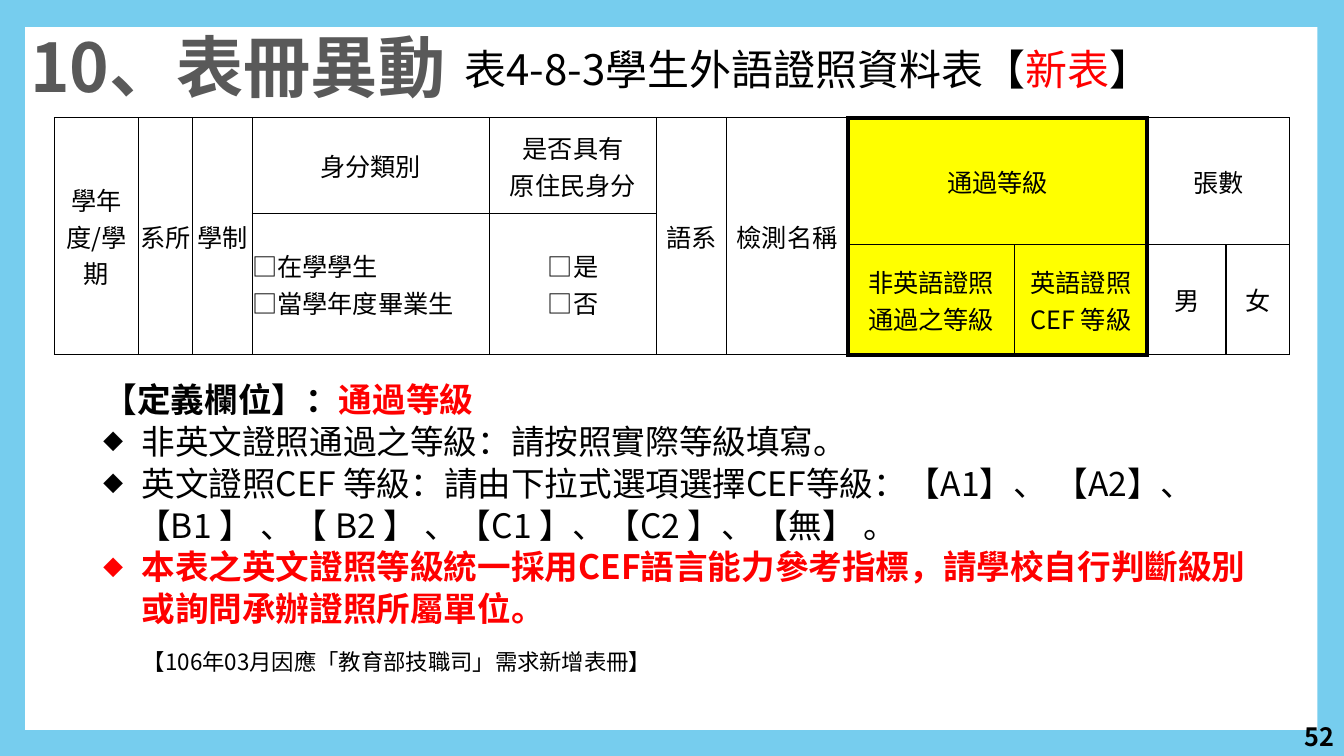
"""Build the slide on the student foreign language certificate table."""
from lxml.etree import SubElement
from pptx import Presentation
from pptx.dml.color import RGBColor
from pptx.enum.shapes import MSO_SHAPE
from pptx.enum.text import MSO_ANCHOR, PP_ALIGN
from pptx.oxml.ns import qn
from pptx.util import Pt

FONT = "Noto Sans CJK SC"
COLORS = {"sky": "76CDEE", "white": "FFFFFF", "black": "000000",
          "red": "FF0000", "grey": "595959", "yellow": "FFFF00"}
COLUMN_WIDTHS = [59.8, 39, 42.5, 169.4, 119.5, 49.7, 87, 118.8, 95, 56.2, 45.4]
ROW_HEIGHTS = [68.4, 22.3, 78.5]
LEVEL_COLUMNS = (7, 8)
HEADINGS = [
    (0, 0, 3, 1, ["學年度/學期"]),
    (0, 1, 3, 1, ["系所"]),
    (0, 2, 3, 1, ["學制"]),
    (0, 3, 1, 1, ["身分類別"]),
    (0, 4, 1, 1, ["是否具有", "原住民身分"]),
    (0, 5, 3, 1, ["語系"]),
    (0, 6, 3, 1, ["檢測名稱"]),
    (0, 7, 2, 2, ["通過等級"]),
    (0, 9, 2, 2, ["張數"]),
    (1, 3, 2, 1, ["□在學學生", "□當學年度畢業生"]),
    (1, 4, 2, 1, ["□是", "□否"]),
    (2, 7, 1, 1, ["非英語證照", "通過之等級"]),
    (2, 8, 1, 1, ["英語證照", "CEF 等級"]),
    (2, 9, 1, 1, ["男"]),
    (2, 10, 1, 1, ["女"]),
]


class SlideBuilder:
    """Hold the style and the current slide."""

    def __init__(self, slide, font, colors):
        self.slide, self.font = slide, font
        self.colors = {name: RGBColor.from_string(code) for name, code in colors.items()}

    def paint(self, fill, color):
        fill.solid()
        fill.fore_color.rgb = self.colors[color]

    def background(self, color):
        self.paint(self.slide.background.fill, color)

    def panel(self, left, top, width, height, color):
        panel = self.slide.shapes.add_shape(
            MSO_SHAPE.RECTANGLE, Pt(left), Pt(top), Pt(width), Pt(height))
        panel.shadow.inherit = False
        panel.line.fill.background()
        self.paint(panel.fill, color)

    def text_box(self, left, top, width, height, anchor=MSO_ANCHOR.TOP):
        frame = self.slide.shapes.add_textbox(
            Pt(left), Pt(top), Pt(width), Pt(height)).text_frame
        frame.word_wrap = True
        frame.vertical_anchor = anchor
        return frame

    def paragraph(self, frame, parts, size, bold=False, align=PP_ALIGN.LEFT,
                  spacing=None, indent=0, bullet=None):
        first = frame.paragraphs[0]
        paragraph = frame.add_paragraph() if first.runs else first
        paragraph.alignment = align
        paragraph.line_spacing = spacing
        font = paragraph.font
        font.size, font.bold, font.name = Pt(size), bold, self.font
        font.color.rgb = self.colors[parts[0][1]]
        properties = paragraph._p.get_or_add_pPr()
        SubElement(properties.find(qn("a:defRPr")), qn("a:ea"), typeface=self.font)
        if indent:
            properties.set("marL", str(Pt(indent)))
        if bullet:
            properties.set("indent", str(-Pt(indent)))
            size_tag = properties.makeelement(qn("a:buSzPct"), {"val": "60000"})
            font_tag = properties.makeelement(qn("a:buFont"), {"typeface": self.font})
            char_tag = properties.makeelement(qn("a:buChar"), {"char": bullet})
            for tag in (size_tag, font_tag, char_tag):
                properties.find(qn("a:defRPr")).addprevious(tag)
        for text, color in parts:
            run = paragraph.add_run()
            run.text = text
            if len(parts) > 1:
                run.font.color.rgb = self.colors[color]

    def cell_style(self, cell, fill, borders):
        cell.margin_left = cell.margin_right = cell.margin_top = cell.margin_bottom = 0
        cell.vertical_anchor = MSO_ANCHOR.MIDDLE
        properties = cell._tc.get_or_add_tcPr()
        for side, width in borders.items():
            line = SubElement(properties, qn(f"a:ln{side}"), w=str(Pt(width)))
            solid = SubElement(line, qn("a:solidFill"))
            SubElement(solid, qn("a:srgbClr"), val=str(self.colors["black"]))
        self.paint(cell.fill, fill)

    def table(self, left, top, widths, heights, headings):
        table = self.slide.shapes.add_table(
            len(heights), len(widths), Pt(left), Pt(top),
            Pt(sum(widths)), Pt(sum(heights))).table
        for column, width in zip(table.columns, widths):
            column.width = Pt(width)
        for row, height in zip(table.rows, heights):
            row.height = Pt(height)
        start, end = LEVEL_COLUMNS
        for row in range(len(heights)):
            for column in range(len(widths)):
                level = column in LEVEL_COLUMNS
                thick = {"L": column in (start, end + 1),
                         "R": column in (start - 1, end),
                         "T": level and row == 0,
                         "B": level and row == len(heights) - 1}
                self.cell_style(table.cell(row, column), "yellow" if level else "white",
                                {side: 3 if wide else 1 for side, wide in thick.items()})
        for row, column, rows, columns, lines in headings:
            cell = table.cell(row, column)
            if rows * columns > 1:
                cell.merge(table.cell(row + rows - 1, column + columns - 1))
            align = PP_ALIGN.LEFT if (row, column) == (1, 3) else PP_ALIGN.CENTER
            for line in lines:
                self.paragraph(cell.text_frame, [(line, "black")], 18, align=align)


def main():
    deck = Presentation()
    deck.slide_width, deck.slide_height = Pt(960), Pt(540)
    builder = SlideBuilder(deck.slides.add_slide(deck.slide_layouts[6]), FONT, COLORS)
    builder.background("sky")
    builder.panel(18, 19.4, 923, 502, "white")

    definition = builder.text_box(67, 255.6, 847.4, 232.6)
    builder.paragraph(definition, [("【定義欄位】：", "black"), ("通過等級", "red")],
                      24, bold=True, spacing=Pt(40))
    rules = [
        ("非英文證照通過之等級：請按照實際等級填寫。", "black", 27, "◆"),
        ("英文證照CEF 等級：請由下拉式選項選擇CEF等級：【A1】、 【A2】、", "black", 27, "◆"),
        ("【B1 】 、【 B2 】 、【C1 】、【C2 】、【無】 。", "black", 24, None),
        ("本表之英文證照等級統一採用CEF語言能力參考指標，請學校自行判斷級別或詢問承辦證照所屬單位。",
         "red", 27, "◆"),
    ]
    for text, color, indent, bullet in rules:
        builder.paragraph(definition, [(text, color)], 24, bold=color == "red",
                          spacing=Pt(30), indent=indent, bullet=bullet)
    builder.paragraph(definition, [("【106年03月因應「教育部技職司」需求新增表冊】", "black")],
                      16, spacing=Pt(33), indent=28)

    page_number = builder.text_box(825.8, 512, 134.6, 28.8, MSO_ANCHOR.MIDDLE)
    builder.paragraph(page_number, [("52", "black")], 18, bold=True, align=PP_ALIGN.RIGHT)

    builder.table(38.9, 84.2, COLUMN_WIDTHS, ROW_HEIGHTS, HEADINGS)

    chapter = builder.text_box(14.4, 14.4, 334.8, 65.5)
    builder.paragraph(chapter, [("10、表冊異動", "grey")], 48, bold=True)
    title = builder.text_box(324.7, 31.7, 635, 54)
    builder.paragraph(title, [("表4-8-3學生外語證照資料表【", "black"), ("新表", "red"),
                              ("】", "black")], 30, spacing=0.9)
    deck.save("out.pptx")


if __name__ == "__main__":
    main()
